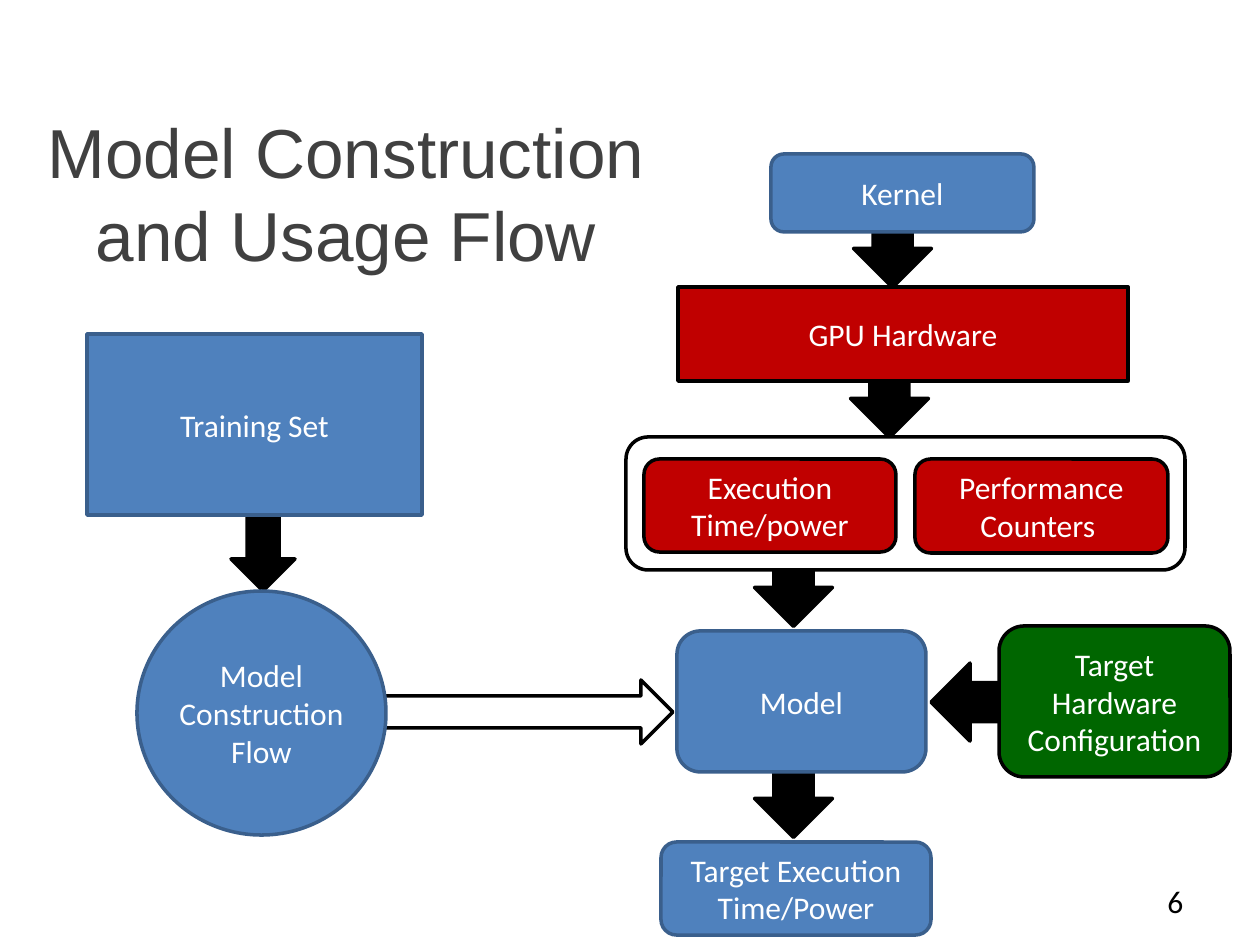
from pptx import Presentation
from pptx.dml.color import RGBColor
from pptx.enum.shapes import MSO_SHAPE as Kind
from pptx.enum.text import MSO_ANCHOR as Anchor, PP_ALIGN as Align
from pptx.util import Pt

SCALE = 914400 / 126
BLACK = RGBColor(0x00, 0x00, 0x00)
WHITE = RGBColor(0xFF, 0xFF, 0xFF)
GRAY = RGBColor(0x40, 0x40, 0x40)
BLUE = RGBColor(0x4F, 0x81, 0xBD)
NAVY = RGBColor(0x3A, 0x5F, 0x8C)
RED = RGBColor(0xC0, 0x00, 0x00)
GREEN = RGBColor(0x00, 0x66, 0x00)


def px(*nums):
    return [round(n * SCALE) for n in nums]


def write(frame, text, size=18, font="Calibri", color=WHITE,
          align=Align.CENTER, anchor=Anchor.MIDDLE, wrap=True):
    frame.word_wrap = wrap
    frame.vertical_anchor = anchor
    para = frame.paragraphs[0]
    para.alignment = align
    run = para.add_run()
    run.text = text
    run.font.size = Pt(size)
    run.font.name = font
    run.font.color.rgb = color


deck = Presentation()
deck.slide_width, deck.slide_height = px(1260, 945)
slide = deck.slides.add_slide(deck.slide_layouts[5])
shapes = slide.shapes

title = shapes.title
title.left, title.top, title.width, title.height = px(-21, 97, 734, 190)
write(title.text_frame, "Model Construction and Usage Flow",
      size=39.6, font="Arial", color=GRAY)

page = shapes.add_textbox(*px(1155, 876, 42, 50))
write(page.text_frame, "6", color=BLACK, align=Align.LEFT,
      anchor=Anchor.TOP, wrap=False)

ARROW, RECT, ROUND, OVAL = (
    Kind.RIGHT_ARROW, Kind.RECTANGLE, Kind.ROUNDED_RECTANGLE, Kind.OVAL)

items = [
    (ARROW, (207, 503, 112, 64), 90, BLACK, BLACK, ""),
    (ARROW, (355, 680, 318, 64), 0, WHITE, BLACK, ""),
    (RECT, (87, 334, 335, 181), 0, BLUE, NAVY, "Training Set"),
    (OVAL, (137, 591, 249, 244), 0, BLUE, NAVY, "Model Construction Flow"),
    (ARROW, (931, 663, 118, 78), 180, BLACK, BLACK, ""),
    (ARROW, (738, 743, 111, 78), 90, BLACK, BLACK, ""),
    (ARROW, (738, 532, 111, 78), 90, BLACK, BLACK, ""),
    (ARROW, (837, 193, 111, 78), 90, BLACK, BLACK, ""),
    (ARROW, (834, 343, 111, 78), 90, BLACK, BLACK, ""),
    (ROUND, (626, 437, 559, 133), 0, WHITE, BLACK, ""),
    (RECT, (678, 287, 450, 94), 0, RED, BLACK, "GPU Hardware"),
    (ROUND, (771, 154, 263, 78), 0, BLUE, NAVY, "Kernel"),
    (ROUND, (677, 631, 249, 141), 0, BLUE, NAVY, "Model"),
    (ROUND, (644, 459, 252, 93), 0, RED, BLACK, "Execution Time/power"),
    (ROUND, (915, 459, 253, 94), 0, RED, BLACK, "Performance Counters "),
    (ROUND, (999, 626, 231, 151), 0, GREEN, BLACK,
     "Target Hardware Configuration"),
    (ROUND, (661, 842, 270, 93), 0, BLUE, NAVY, "Target Execution Time/Power"),
]

for kind, box, turn, fill, line, text in items:
    shape = shapes.add_shape(kind, *px(*box))
    shape.rotation = turn
    shape.shadow.inherit = False
    shape.fill.solid()
    shape.fill.fore_color.rgb = fill
    shape.line.color.rgb = line
    shape.line.width = Pt(2)
    if text:
        write(shape.text_frame, text)
    if kind == OVAL:
        shape.text_frame.margin_left = shape.text_frame.margin_right = 0

deck.save("out.pptx")
